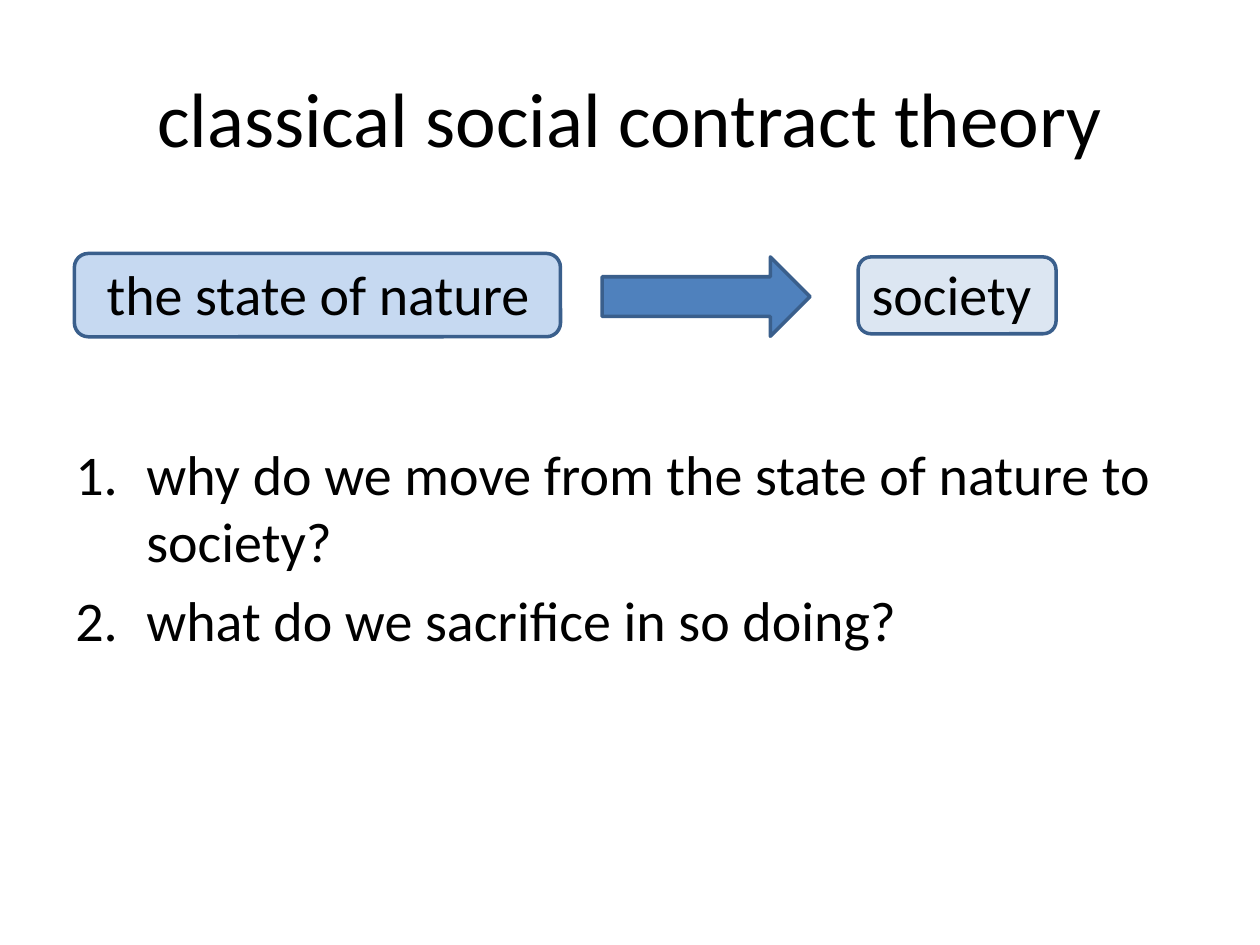
from dataclasses import dataclass

from lxml.etree import SubElement
from pptx import Presentation
from pptx.dml.color import RGBColor
from pptx.enum.shapes import MSO_SHAPE
from pptx.enum.text import MSO_ANCHOR, PP_ALIGN
from pptx.oxml.ns import qn
from pptx.slide import Slide
from pptx.util import Cm, Pt


@dataclass(frozen=True)
class Theme:
    font: str = "Calibri"
    title_size: int = 44
    body_size: int = 32
    text: str = "000000"
    outline: str = "3A5F8C"
    outline_width: int = 2
    nature: str = "C6D9F1"
    society: str = "DCE6F2"
    arrow: str = "4F81BD"


@dataclass(frozen=True)
class Frame:
    """A rectangle in centimetres."""
    left: float
    top: float
    width: float
    height: float

    def lengths(self) -> tuple[Cm, Cm, Cm, Cm]:
        return Cm(self.left), Cm(self.top), Cm(self.width), Cm(self.height)


@dataclass(frozen=True)
class Block:
    kind: MSO_SHAPE
    frame: Frame
    fill: str


@dataclass(frozen=True)
class Caption:
    frame: Frame
    lines: tuple[str, ...]
    size: int
    align: PP_ALIGN = PP_ALIGN.LEFT
    anchor: MSO_ANCHOR = MSO_ANCHOR.TOP
    numbered: bool = False


THEME = Theme()
NUMBER_INDENT = Cm(1.43)
ROW_TOP = 5.11

BLOCKS = (
    Block(MSO_SHAPE.ROUNDED_RECTANGLE, Frame(17.3, 5.18, 3.99, 1.55), THEME.society),
    Block(MSO_SHAPE.ROUNDED_RECTANGLE, Frame(1.5, ROW_TOP, 9.8, 1.68), THEME.nature),
    Block(MSO_SHAPE.RIGHT_ARROW, Frame(12.14, 5.18, 4.19, 1.6), THEME.arrow),
)
CAPTIONS = (
    Caption(Frame(1.27, 0.76, 22.86, 3.18), ("classical social contract theory",),
            THEME.title_size, PP_ALIGN.CENTER, MSO_ANCHOR.MIDDLE),
    Caption(Frame(1.27, 8.74, 22.86, 8.28),
            ("why do we move from the state of nature to society?",
             "what do we sacrifice in so doing?"),
            THEME.body_size, numbered=True),
    Caption(Frame(1.9, ROW_TOP, 9.4, 1.63), ("the state of nature",), THEME.body_size),
    Caption(Frame(17.32, ROW_TOP, 4.8, 1.63), ("society",), THEME.body_size),
)


def apply_format(target: object, values: dict[str, object]) -> None:
    for name, value in values.items():
        setattr(target, name, value)


def draw_block(page: Slide, block: Block) -> None:
    shape = page.shapes.add_shape(block.kind, *block.frame.lengths())
    shape.shadow.inherit = False
    shape.fill.solid()
    shape.fill.fore_color.rgb = RGBColor.from_string(block.fill)
    shape.line.color.rgb = RGBColor.from_string(THEME.outline)
    shape.line.width = Pt(THEME.outline_width)


def number_paragraph(para: object) -> None:
    """Give the paragraph a hanging "1." style number."""
    para.space_before = Pt(THEME.body_size * 0.2)
    properties = para._p.get_or_add_pPr()
    properties.set("marL", str(NUMBER_INDENT))
    properties.set("indent", str(-NUMBER_INDENT))
    SubElement(properties, qn("a:buFont"), typeface="+mj-lt")
    SubElement(properties, qn("a:buAutoNum"), type="arabicPeriod")


def draw_caption(page: Slide, caption: Caption) -> None:
    box = page.shapes.add_textbox(*caption.frame.lengths())
    frame = box.text_frame
    apply_format(frame, {"word_wrap": True, "vertical_anchor": caption.anchor})
    for index, line in enumerate(caption.lines):
        para = frame.add_paragraph() if index else frame.paragraphs[0]
        para.alignment = caption.align
        if caption.numbered:
            number_paragraph(para)
        span = para.add_run()
        span.text = line
        apply_format(span.font, {"name": THEME.font, "size": Pt(caption.size)})
        span.font.color.rgb = RGBColor.from_string(THEME.text)


def main() -> None:
    deck = Presentation()
    apply_format(deck, {"slide_width": Cm(25.4), "slide_height": Cm(19.05)})
    page = deck.slides.add_slide(deck.slide_layouts[6])
    for block in BLOCKS:
        draw_block(page, block)
    for caption in CAPTIONS:
        draw_caption(page, caption)
    deck.save("out.pptx")


if __name__ == "__main__":
    main()
